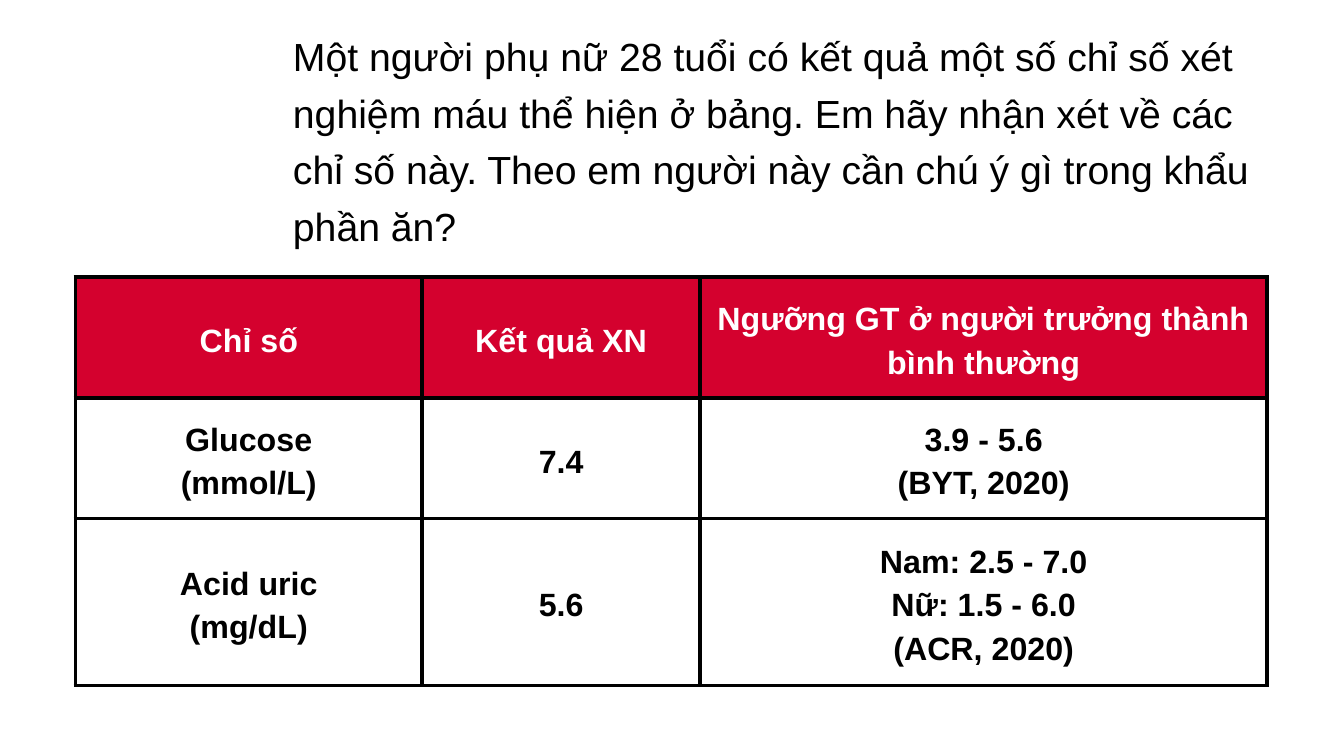
from lxml.etree import SubElement
from pptx import Presentation
from pptx.dml.color import RGBColor as Rgb
from pptx.enum.text import MSO_ANCHOR as Anchor, MSO_AUTO_SIZE as Fit, PP_ALIGN as Align
from pptx.oxml.ns import qn
from pptx.util import Pt

SCALE = 9525
BLACK, WHITE, RED = "000000", "FFFFFF", "D4012E"
PROMPT = (
    "Một người phụ nữ 28 tuổi có kết quả một số chỉ số xét nghiệm máu thể hiện ở bảng. "
    "Em hãy nhận xét về các chỉ số này. Theo em người này cần chú ý gì trong khẩu phần ăn?"
)
ROWS = [
    ["Chỉ số", "Kết quả XN", "Ngưỡng GT ở người trưởng thành bình thường"],
    ["Glucose\n(mmol/L)", "7.4", "3.9 - 5.6\n(BYT, 2020)"],
    ["Acid uric\n(mg/dL)", "5.6", "Nam: 2.5 - 7.0\nNữ: 1.5 - 6.0\n(ACR, 2020)"],
]
WIDTHS = [330, 265, 540]
HEIGHTS = [115, 115, 159]
SIDES = ["left", "right", "top", "bottom"]


def px(count):
    return count * SCALE


def paint(color, tone):
    color.rgb = Rgb.from_string(tone)


def apply(item, values):
    for name, value in values.items():
        setattr(item, name, value)


def inset(item, gap):
    apply(item, {f"margin_{side}": px(gap) for side in SIDES})


def write(frame, text, size, tone, align, bold=False):
    frame.text = text
    for para in frame.paragraphs:
        apply(para, {"alignment": align, "line_spacing": 1.2})
        for run in para.runs:
            apply(run.font, {"name": "Arial", "size": Pt(size), "bold": bold})
            paint(run.font.color, tone)


def border(cell, tone, width):
    props = cell._tc.get_or_add_tcPr()
    for tag in ["a:lnL", "a:lnR", "a:lnT", "a:lnB"]:
        line = SubElement(props, qn(tag), w=str(Pt(width)))
        fill = SubElement(line, qn("a:solidFill"))
        SubElement(fill, qn("a:srgbClr"), val=tone)


def add_prompt(slide):
    title = slide.shapes.title
    apply(title, {"left": px(279), "top": px(22), "width": px(950), "height": px(212)})
    frame = title.text_frame
    apply(frame, {"word_wrap": True, "auto_size": Fit.NONE, "vertical_anchor": Anchor.TOP})
    inset(frame, 0)
    write(frame, PROMPT, 28, BLACK, Align.LEFT)


def fill_cell(cell, text, head):
    cell.vertical_anchor = Anchor.MIDDLE
    inset(cell, 13)
    write(cell.text_frame, text, 23, WHITE if head else BLACK, Align.CENTER, True)
    border(cell, BLACK, 3)
    if head:
        cell.fill.solid()
        paint(cell.fill.fore_color, RED)
    else:
        cell.fill.background()


def add_results(slide):
    box = [px(n) for n in (72, 264, sum(WIDTHS), sum(HEIGHTS))]
    table = slide.shapes.add_table(len(ROWS), len(WIDTHS), *box).table
    table.horz_banding = False
    for col, width in zip(table.columns, WIDTHS):
        col.width = px(width)
    for row, height in zip(table.rows, HEIGHTS):
        row.height = px(height)
    for r, texts in enumerate(ROWS):
        for c, text in enumerate(texts):
            fill_cell(table.cell(r, c), text, r == 0)


def main():
    deck = Presentation()
    apply(deck, {"slide_width": px(1280), "slide_height": px(720)})
    slide = deck.slides.add_slide(deck.slide_layouts[5])
    add_prompt(slide)
    add_results(slide)
    deck.save("out.pptx")


if __name__ == "__main__":
    main()
